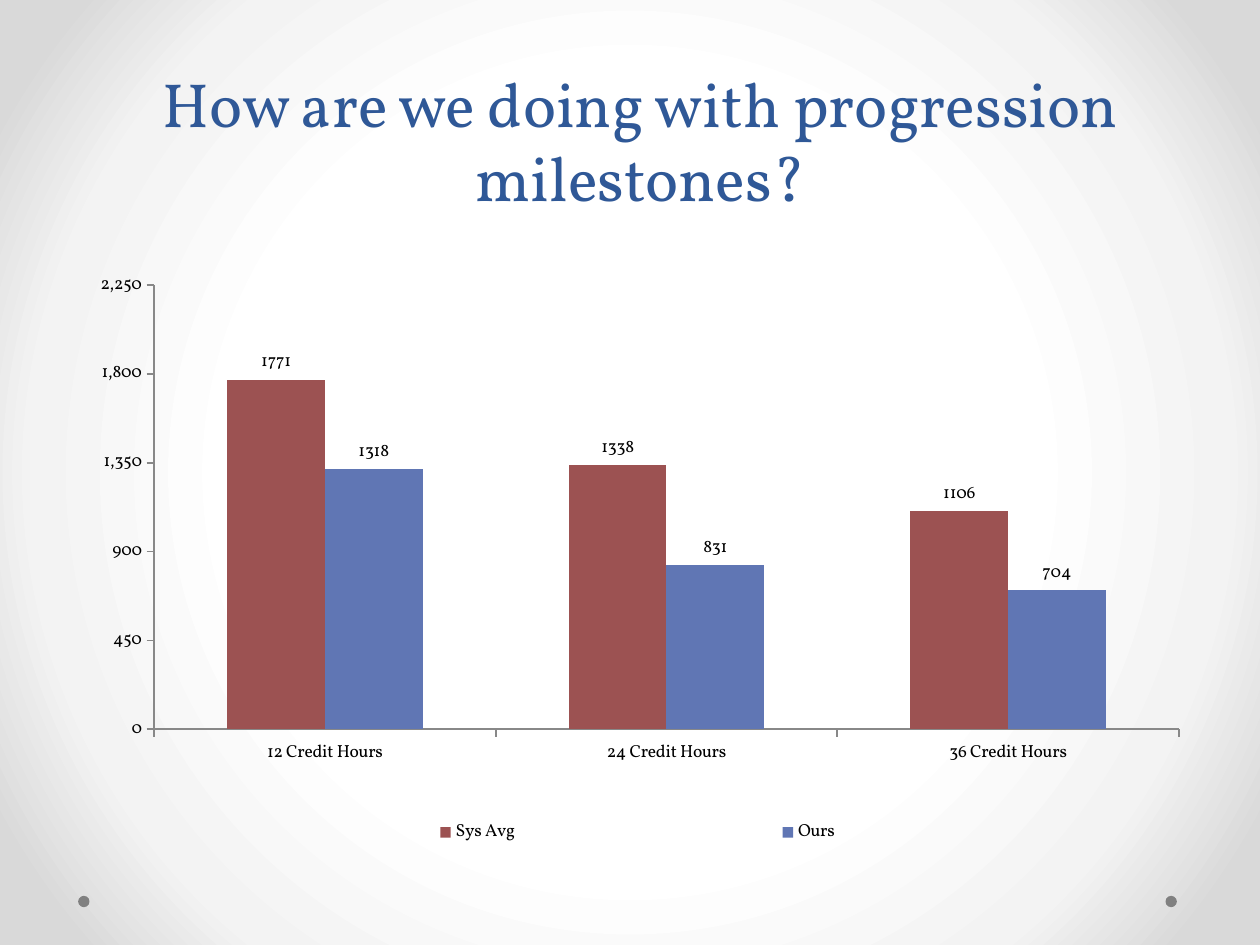
from typing import NamedTuple

from lxml import etree
from pptx import Presentation
from pptx.chart.data import CategoryChartData
from pptx.dml.color import RGBColor
from pptx.enum.chart import XL_CHART_TYPE as ChartType
from pptx.enum.chart import XL_LABEL_POSITION as LabelPos
from pptx.enum.chart import XL_LEGEND_POSITION as LegendPos
from pptx.enum.chart import XL_TICK_LABEL_POSITION as TickLabelPos
from pptx.enum.chart import XL_TICK_MARK as TickMark
from pptx.enum.shapes import MSO_SHAPE as Shape
from pptx.enum.text import MSO_ANCHOR as Anchor
from pptx.enum.text import PP_ALIGN as Align
from pptx.oxml import parse_xml
from pptx.oxml.ns import nsdecls, qn
from pptx.util import Inches, Pt

BLACK = RGBColor(0x00, 0x00, 0x00)
NAVY = RGBColor(0x2F, 0x58, 0x97)
RED = RGBColor(0x9C, 0x52, 0x52)
BLUE = RGBColor(0x60, 0x76, 0xB4)
DOT_GRAY = RGBColor(0x80, 0x80, 0x80)
AXIS_GRAY = RGBColor(0x88, 0x88, 0x88)
BACKDROP = ((0, "FFFFFF"), (50, "FFFFFF"), (76, "F3F3F3"), (92, "D9D9D9"))
FONT = "Vollkorn"


class Group(NamedTuple):
    name: str
    counts: tuple[int, ...]
    color: RGBColor


MILESTONES = ("12 Credit Hours", "24 Credit Hours", "36 Credit Hours")
GROUPS = (
    Group("Sys Avg", (1771, 1338, 1106), RED),
    Group("Ours", (1318, 831, 704), BLUE),
)


def style_font(font, size: float = 10, color: RGBColor = BLACK) -> None:
    font.name = FONT
    font.size = Pt(size)
    font.bold = False
    font.color.rgb = color


def paint_backdrop(slide) -> None:
    slide.background.fill.gradient()
    gradient = slide.element.find(".//" + qn("a:gradFill"))
    stops = "".join(
        f'<a:gs pos="{pos * 1000}"><a:srgbClr val="{color}"/></a:gs>'
        for pos, color in BACKDROP
    )
    gradient.getparent().replace(gradient, parse_xml(
        f'<a:gradFill {nsdecls("a")} rotWithShape="1"><a:gsLst>{stops}</a:gsLst>'
        '<a:path path="circle"><a:fillToRect l="50000" t="50000" r="50000" b="50000"/>'
        '</a:path></a:gradFill>'))


def add_dot(slide, left: float) -> None:
    dot = slide.shapes.add_shape(
        Shape.OVAL, Inches(left), Inches(7.11), Inches(0.09), Inches(0.09))
    dot.shadow.inherit = False
    dot.fill.solid()
    dot.fill.fore_color.rgb = DOT_GRAY
    dot.line.fill.background()


def add_text(slide, text: str, *, left: float, top: float, width: float,
             height: float, size: float, color: RGBColor) -> None:
    box = slide.shapes.add_textbox(
        Inches(left), Inches(top), Inches(width), Inches(height))
    frame = box.text_frame
    frame.word_wrap = True
    frame.vertical_anchor = Anchor.BOTTOM
    frame.margin_left = frame.margin_right = Inches(0.05)
    frame.margin_top = frame.margin_bottom = Inches(0.05)
    paragraph = frame.paragraphs[0]
    paragraph.alignment = Align.CENTER
    run = paragraph.add_run()
    run.text = text
    style_font(run.font, size, color)


def set_layout(part, x: float, y: float, w: float, h: float,
               before: str, inner: bool = False) -> None:
    """Place a chart part by fractions of the chart area."""
    for old in part.findall(qn("c:layout")):
        part.remove(old)
    layout = etree.Element(qn("c:layout"))
    manual = etree.SubElement(layout, qn("c:manualLayout"))
    settings = [("layoutTarget", "inner")] if inner else []
    settings += [("xMode", "edge"), ("yMode", "edge"),
                 ("x", x), ("y", y), ("w", w), ("h", h)]
    for tag, value in settings:
        etree.SubElement(manual, qn(f"c:{tag}")).set("val", str(value))
    part.find(qn(before)).addprevious(layout)


def style_axis(axis) -> None:
    axis.has_major_gridlines = False
    axis.major_tick_mark = TickMark.OUTSIDE
    axis.minor_tick_mark = TickMark.NONE
    axis.format.line.color.rgb = AXIS_GRAY
    axis.format.line.width = Pt(1)
    style_font(axis.tick_labels.font)


def add_milestone_chart(slide) -> None:
    data = CategoryChartData(number_format="0")
    data.categories = MILESTONES
    for group in GROUPS:
        data.add_series(group.name, group.counts)
    chart = slide.shapes.add_chart(
        ChartType.COLUMN_CLUSTERED, Inches(0.72), Inches(2.08),
        Inches(8.68), Inches(4.69), data).chart
    chart.has_title = False
    style_font(chart.font)

    # Axes
    style_axis(chart.category_axis)
    chart.category_axis.tick_label_position = TickLabelPos.LOW
    counts_axis = chart.value_axis
    style_axis(counts_axis)
    counts_axis.minimum_scale = 0
    counts_axis.maximum_scale = 2250
    counts_axis.major_unit = 450
    counts_axis.tick_labels.number_format = "#,##0"
    counts_axis.tick_labels.number_format_is_linked = False

    # Columns and their values
    plot = chart.plots[0]
    plot.gap_width = 150
    plot.overlap = 0
    plot.vary_by_categories = False
    for series, group in zip(plot.series, GROUPS):
        series.format.fill.solid()
        series.format.fill.fore_color.rgb = group.color
        labels = series.data_labels
        labels.show_value = True
        labels.position = LabelPos.OUTSIDE_END
        labels.number_format = "0"
        labels.number_format_is_linked = False
        style_font(labels.font)

    # Legend and layout
    chart.has_legend = True
    legend = chart.legend
    legend.position = LegendPos.BOTTOM
    legend.include_in_layout = True
    style_font(legend.font)
    plot_area = chart.element.find(".//" + qn("c:plotArea"))
    set_layout(plot_area, 0.058, 0.039, 0.937, 0.752, "c:barChart", inner=True)
    set_layout(chart.element.find(".//" + qn("c:legend")),
               0.08, 0.93, 0.84, 0.07, "c:overlay")


def main() -> None:
    deck = Presentation()
    deck.slide_width, deck.slide_height = Inches(10), Inches(7.5)
    slide = deck.slides.add_slide(deck.slide_layouts[6])

    paint_backdrop(slide)
    for left in (9.25, 0.62):
        add_dot(slide, left)
    add_text(slide, "How are we doing with progression milestones?",
             left=0.25, top=0, width=9.67, height=1.75,
             size=35.6, color=NAVY)
    add_milestone_chart(slide)
    deck.save("out.pptx")


if __name__ == "__main__":
    main()
